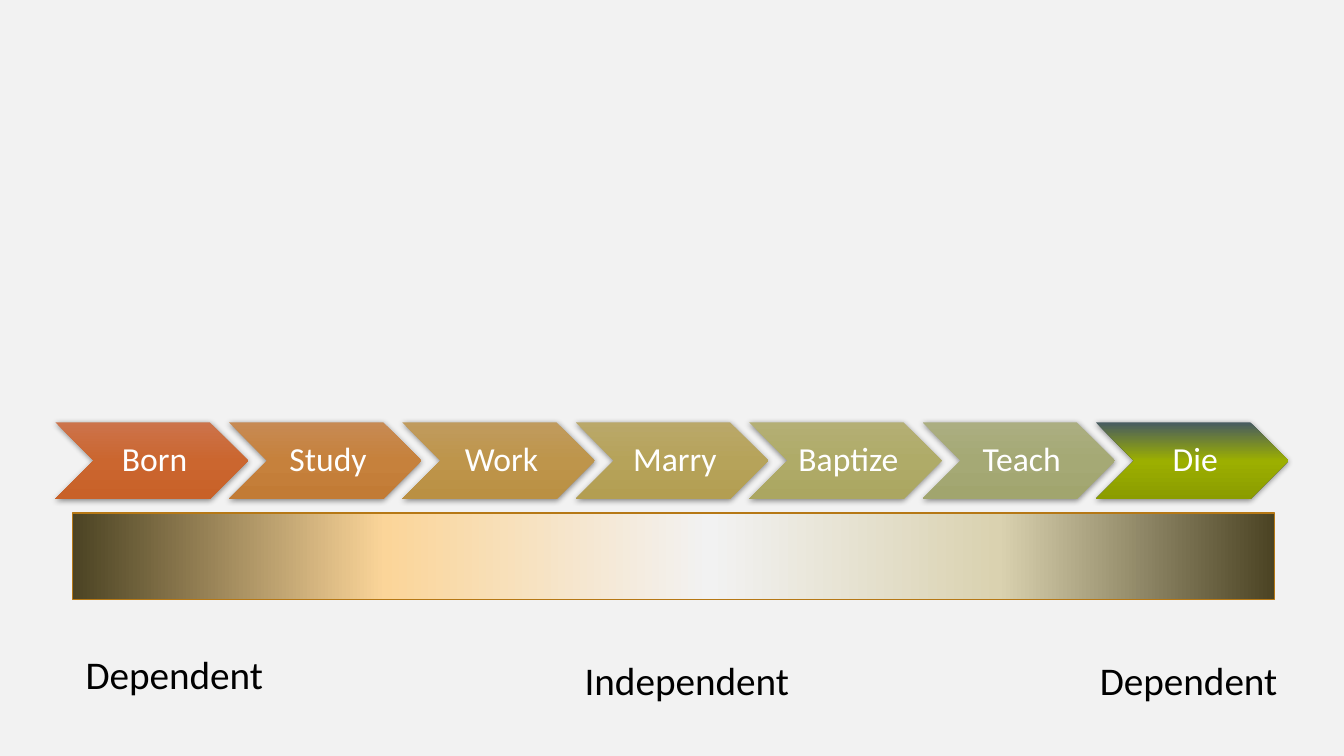
import pptx
import pptx.util
import pptx.dml.color
import pptx.enum.shapes
import pptx.enum.text
import pptx.oxml
import pptx.oxml.ns
from dataclasses import dataclass

STAGES = [
    ("Born", ("CC734B", "CB662F", "C86128")),
    ("Study", ("C78A53", "C6813C", "C27B35")),
    ("Work", ("C09B5E", "BE954B", "BA9043")),
    ("Marry", ("BAA86A", "B6A35A", "B39E52")),
    ("Baptize", ("B4AF75", "AFAB68", "ABA661")),
    ("Teach", ("ABAE81", "A5A975", "A1A56E")),
    ("Die", ("475B61", "9CAF00", "8B9C00")),
]
BAR_STOPS = [(0, "4B4323"), (26, "FBD599"), (53, "F2F2F2"), (77, "DAD2B0"), (100, "4B4323")]
LABELS = [("Dependent", 0.75, 6.4), ("Independent", 5.7, 6.46), ("Dependent", 10.81, 6.46)]


@dataclass
class Theme:
    font: str = "Calibri"
    background: str = "F2F2F2"
    stage_text: str = "FFFFFF"
    label_text: str = "000000"
    bar_line: str = "B67815"
    shadow: str = "000000"
    stage_size: int = 24
    label_size: int = 28


theme = Theme()
Inches = pptx.util.Inches
Pt = pptx.util.Pt
SHAPE = pptx.enum.shapes.MSO_SHAPE
NS = pptx.oxml.ns.nsdecls("a")


def rgb(value):
    return pptx.dml.color.RGBColor.from_string(value)


def add_run(p, text, size, color):
    r = p.add_run()
    r.text = text
    r.font.name = theme.font
    r.font.size = Pt(size)
    r.font.color.rgb = rgb(color)


def set_gradient(s, stops, angle):
    s.fill.background()
    empty = s.element.spPr.find(pptx.oxml.ns.qn("a:noFill"))
    marks = "".join(
        f'<a:gs pos="{pos * 1000}"><a:srgbClr val="{color}"/></a:gs>' for pos, color in stops
    )
    s.element.spPr.replace(empty, pptx.oxml.parse_xml(
        f'<a:gradFill {NS} rotWithShape="1"><a:gsLst>{marks}</a:gsLst>'
        f'<a:lin ang="{angle * 60000}" scaled="0"/></a:gradFill>'
    ))


def set_shadow(s):
    effects = s.element.spPr.find(pptx.oxml.ns.qn("a:effectLst"))
    effects.append(pptx.oxml.parse_xml(
        f'<a:outerShdw {NS} blurRad="{Pt(4.4)}" dist="{Pt(1.2)}" dir="5400000" '
        f'algn="ctr" rotWithShape="0"><a:srgbClr val="{theme.shadow}">'
        '<a:alpha val="45000"/></a:srgbClr></a:outerShdw>'
    ))


def add_gradient_shape(slide, kind, box, stops, angle):
    s = slide.shapes.add_shape(kind, *map(Inches, box))
    s.shadow.inherit = False
    set_gradient(s, stops, angle)
    return s


def add_stage(slide, index, name, colors):
    box = (0.55 + 1.72 * index, 4.19, 1.91, 0.76)
    s = add_gradient_shape(slide, SHAPE.CHEVRON, box, list(zip((0, 50, 100), colors)), 90)
    s.line.fill.background()
    set_shadow(s)
    tf = s.text_frame
    tf.word_wrap = True
    tf.vertical_anchor = pptx.enum.text.MSO_ANCHOR.MIDDLE
    tf.margin_left = Inches(0.1)
    tf.margin_top = tf.margin_right = tf.margin_bottom = Inches(0.04)
    p = tf.paragraphs[0]
    p.alignment = pptx.enum.text.PP_ALIGN.CENTER
    p.line_spacing = 0.9
    add_run(p, name, theme.stage_size, theme.stage_text)


def add_label(slide, text, left, top):
    tf = slide.shapes.add_textbox(*map(Inches, (left, top, 2.3, 0.57))).text_frame
    tf.word_wrap = True
    tf.auto_size = pptx.enum.text.MSO_AUTO_SIZE.SHAPE_TO_FIT_TEXT
    add_run(tf.paragraphs[0], text, theme.label_size, theme.label_text)


def main():
    prs = pptx.Presentation()
    prs.slide_width, prs.slide_height = Inches(13.33), Inches(7.5)
    slide = prs.slides.add_slide(prs.slide_layouts[6])
    slide.background.fill.solid()
    slide.background.fill.fore_color.rgb = rgb(theme.background)

    for index, (name, colors) in enumerate(STAGES):
        add_stage(slide, index, name, colors)

    bar = add_gradient_shape(slide, SHAPE.RECTANGLE, (0.72, 5.09, 11.92, 0.86), BAR_STOPS, 0)
    bar.line.color.rgb = rgb(theme.bar_line)
    bar.line.width = Pt(1)

    for label in LABELS:
        add_label(slide, *label)

    prs.save("out.pptx")


if __name__ == "__main__":
    main()
